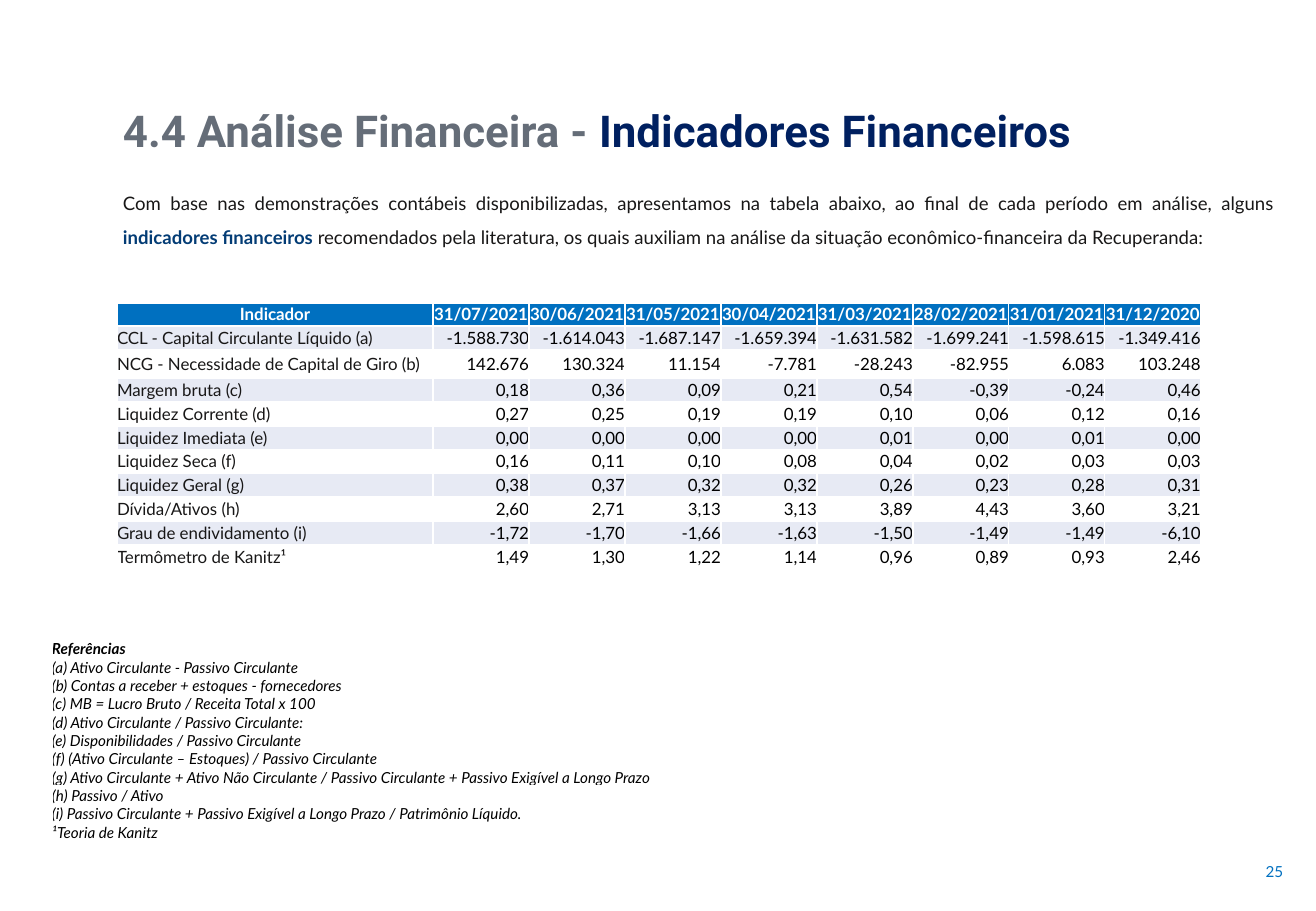
from lxml import etree
from pptx import Presentation
from pptx import util as u
from pptx.dml.color import RGBColor
from pptx.enum import text as t
from pptx.oxml import ns

PX = 914400 / 121.5
BLUE = RGBColor(0x00, 0x70, 0xC0)
NAVY = RGBColor(0x00, 0x20, 0x60)
DARK_BLUE = RGBColor(0x03, 0x3C, 0x75)
GREY = RGBColor(0x65, 0x6D, 0x78)
INK = RGBColor(0x18, 0x17, 0x17)
BLACK = RGBColor(0, 0, 0)
WHITE = RGBColor(255, 255, 255)
BAND = RGBColor(0xE7, 0xEA, 0xF4)
LEFT, CENTER, RIGHT, JUSTIFY = (t.PP_ALIGN.LEFT, t.PP_ALIGN.CENTER,
                                t.PP_ALIGN.RIGHT, t.PP_ALIGN.JUSTIFY)


def add_text(box, runs, size, font="Lato", align=LEFT):
    """Place a text box (left, top, width, height in px) with (text, colour, bold) runs."""
    shape = slide.shapes.add_textbox(*(round(length * PX) for length in box))
    shape.text_frame.word_wrap = True
    paragraph = shape.text_frame.paragraphs[0]
    paragraph.alignment = align
    paragraph.font.size = u.Pt(size)
    paragraph.font.name = font
    for words, colour, bold in runs:
        run = paragraph.add_run()
        run.text = words
        run.font.color.rgb = colour
        run.font.bold = bold
    return shape.text_frame


def fill_cell(cell, words, size, colour, align=LEFT, bold=False, italic=False, fill=None):
    """Write a cell without margins, with white borders and an optional fill."""
    cell.margin_left = cell.margin_right = cell.margin_top = cell.margin_bottom = 0
    cell.vertical_anchor = t.MSO_ANCHOR.MIDDLE
    properties = cell._tc.get_or_add_tcPr()
    for side, points in (("L", 1), ("R", 1), ("T", 1.5), ("B", 1.5)):
        line = etree.SubElement(properties, ns.qn(f"a:ln{side}"), w=str(u.Pt(points)))
        solid = etree.SubElement(line, ns.qn("a:solidFill"))
        etree.SubElement(solid, ns.qn("a:srgbClr"), val=str(WHITE))
    if fill is None:
        cell.fill.background()
    else:
        cell.fill.solid()
        cell.fill.fore_color.rgb = fill
    paragraph = cell.text_frame.paragraphs[0]
    paragraph.text = words
    paragraph.alignment = align
    font = paragraph.font
    font.name, font.size, font.bold, font.italic = "Lato", u.Pt(size), bold, italic
    font.color.rgb = colour


presentation = Presentation()
presentation.slide_width = round(1316 * PX)
presentation.slide_height = round(911 * PX)
slide = presentation.slides.add_slide(presentation.slide_layouts[6])

# Page number, title and introduction
page_number = add_text((1199, 841, 96, 61), [("25", BLUE, False)], 9, align=RIGHT)
page_number.vertical_anchor = t.MSO_ANCHOR.MIDDLE

title = add_text((111, 98, 994, 66), [
    ("4.4 Análise Financeira - ", GREY, True),
    ("Indicadores Financeiros", NAVY, True)], 26, "Roboto")
title.word_wrap = False

introduction = add_text((111, 175, 1176, 77), [
    ("Com base nas demonstrações contábeis disponibilizadas, apresentamos na tabela "
     "abaixo, ao final de cada período em análise, alguns ", INK, False),
    ("indicadores financeiros ", DARK_BLUE, True),
    ("recomendados pela literatura, os quais auxiliam na análise da situação "
     "econômico-financeira da Recuperanda:", INK, False)], 11, align=JUSTIFY)
introduction.paragraphs[0].line_spacing = 1.5

# Indicator table
dates = ["31/07/2021", "30/06/2021", "31/05/2021", "30/04/2021",
         "31/03/2021", "28/02/2021", "31/01/2021", "31/12/2020"]
indicators = [
    ("CCL - Capital Circulante Líquido (a)",
     "-1.588.730 -1.614.043 -1.687.147 -1.659.394 -1.631.582 -1.699.241 -1.598.615 -1.349.416"),
    ("NCG - Necessidade de Capital de Giro (b)",
     "142.676 130.324 11.154 -7.781 -28.243 -82.955 6.083 103.248"),
    ("Margem bruta (c)", "0,18 0,36 0,09 0,21 0,54 -0,39 -0,24 0,46"),
    ("Liquidez Corrente (d)", "0,27 0,25 0,19 0,19 0,10 0,06 0,12 0,16"),
    ("Liquidez Imediata (e)", "0,00 0,00 0,00 0,00 0,01 0,00 0,01 0,00"),
    ("Liquidez Seca (f)", "0,16 0,11 0,10 0,08 0,04 0,02 0,03 0,03"),
    ("Liquidez Geral (g)", "0,38 0,37 0,32 0,32 0,26 0,23 0,28 0,31"),
    ("Dívida/Ativos (h)", "2,60 2,71 3,13 3,13 3,89 4,43 3,60 3,21"),
    ("Grau de endividamento (i)", "-1,72 -1,70 -1,66 -1,63 -1,50 -1,49 -1,49 -6,10"),
    ("Termômetro de Kanitz¹", "1,49 1,30 1,22 1,14 0,96 0,89 0,93 2,46"),
]
row_heights = [23, 24, 28, 24, 24, 24, 23, 24, 24, 24, 24]
column_widths = [316] + [96] * len(dates)
table = slide.shapes.add_table(
    len(row_heights), len(column_widths), round(117 * PX), round(303 * PX),
    round(sum(column_widths) * PX), round(sum(row_heights) * PX)).table
table.horz_banding = False
for row, height in zip(table.rows, row_heights):
    row.height = round(height * PX)
for column, width in zip(table.columns, column_widths):
    column.width = round(width * PX)

for column, heading in enumerate(["Indicador"] + dates):
    fill_cell(table.cell(0, column), heading, 10, WHITE, CENTER, bold=True, fill=BLUE)
for row, (indicator, values) in enumerate(indicators, start=1):
    band = BAND if row % 2 else None
    fill_cell(table.cell(row, 0), indicator, 10, INK, fill=band)
    for column, value in enumerate(values.split(), start=1):
        fill_cell(table.cell(row, column), value, 10, BLACK, RIGHT, fill=band)

# References
references = [
    "Referências",
    "(a) Ativo Circulante - Passivo Circulante",
    "(b) Contas a receber + estoques - fornecedores",
    "(c) MB = Lucro Bruto / Receita Total x 100",
    "(d) Ativo Circulante / Passivo Circulante:",
    "(e) Disponibilidades / Passivo Circulante",
    "(f) (Ativo Circulante – Estoques) / Passivo Circulante",
    "(g) Ativo Circulante + Ativo Não Circulante / Passivo Circulante + "
    "Passivo Exigível a Longo Prazo",
    "(h) Passivo / Ativo",
    "(i) Passivo Circulante + Passivo Exigível a Longo Prazo / Patrimônio Líquido.",
    "¹Teoria de Kanitz",
]
reference_table = slide.shapes.add_table(
    len(references), 1, round(52 * PX), round(640 * PX),
    round(836 * PX), round(18 * len(references) * PX)).table
reference_table.first_row = False
reference_table.horz_banding = False
for row, reference in enumerate(references):
    fill_cell(reference_table.cell(row, 0), reference, 9, BLACK, bold=row == 0, italic=True)

presentation.save("out.pptx")
